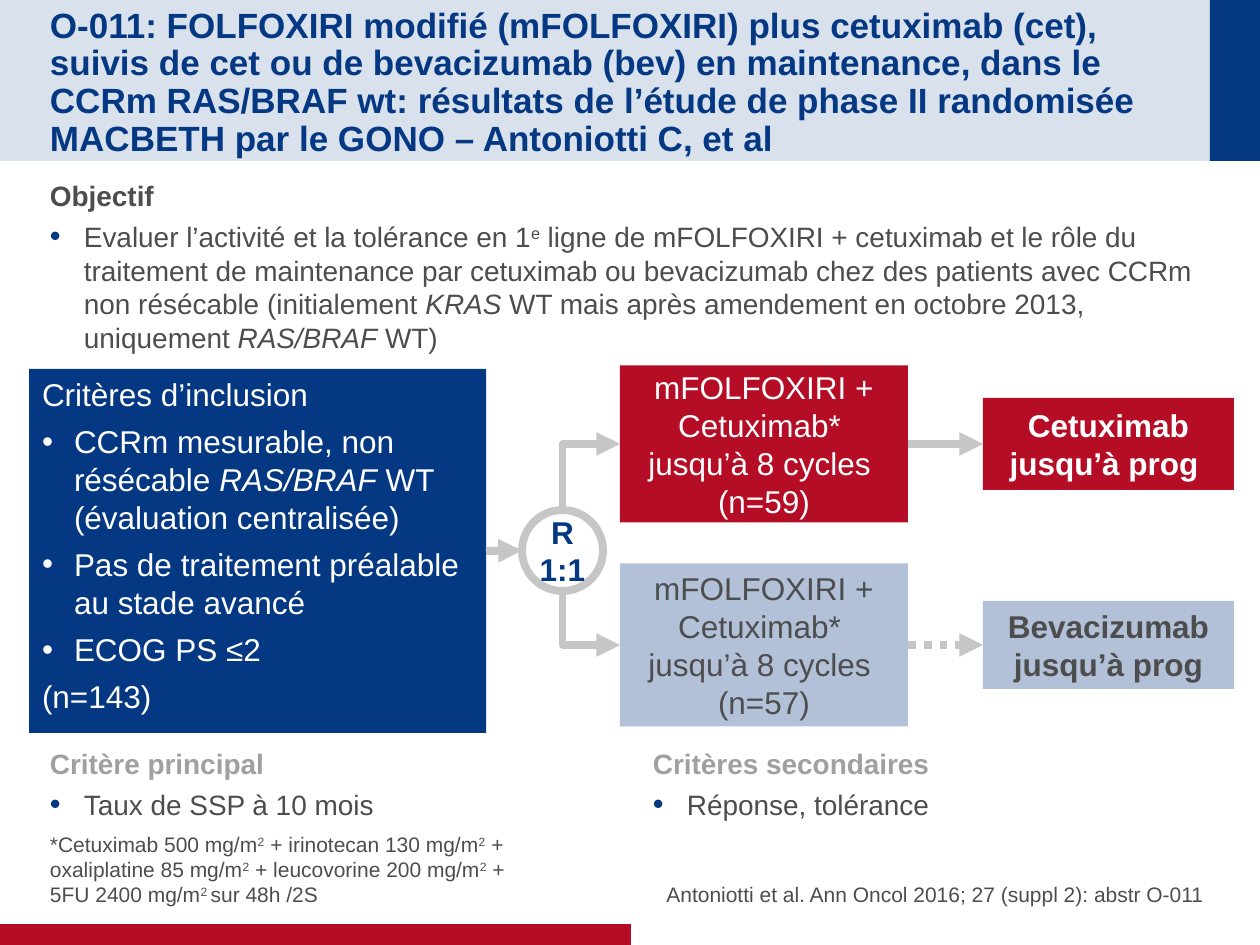
from pptx import Presentation
from pptx.dml.color import RGBColor
from pptx.enum.dml import MSO_LINE
from pptx.enum.shapes import MSO_CONNECTOR, MSO_SHAPE
from pptx.enum.text import MSO_ANCHOR as ANCHOR, PP_ALIGN as ALIGN
from pptx.oxml.ns import qn
from pptx.util import Emu, Pt
from lxml.etree import SubElement

NAVY, RED, PALE, GREY = "043882", "B60D27", "B2C0D8", "4D4D4D"
LIGHT, HEADING, WHITE = "C6C6C6", "A0A0A0", "FFFFFF"

# Content: "|" separates runs, "^" starts a superscript run, "~" an italic one,
# a leading "• " makes a bullet paragraph, "\n" is a line break
TITLE = ["O-011: FOLFOXIRI modifié (mFOLFOXIRI) plus cetuximab (cet), suivis de cet ou de "
         "bevacizumab (bev) en maintenance, dans le CCRm RAS/BRAF wt: résultats de l’étude "
         "de phase II randomisée MACBETH par le GONO – Antoniotti C, et al"]
SECTIONS = [
    ((50, 173, 1174, 654), GREY, "Objectif",
     "• Evaluer l’activité et la tolérance en 1|^e| ligne de mFOLFOXIRI + cetuximab et le rôle du "
     "traitement de maintenance par cetuximab ou bevacizumab chez des patients avec CCRm non "
     "résécable (initialement |~KRAS| WT mais après amendement en octobre 2013, uniquement "
     "|~RAS/BRAF| WT)"),
    ((50, 741, 570, 106), HEADING, "Critère principal", "• Taux de SSP à 10 mois"),
    ((653, 741, 570, 106), HEADING, "Critères secondaires", "• Réponse, tolérance"),
]
NOTES = [
    (50, ALIGN.LEFT, "*Cetuximab 500 mg/m|^2| + irinotecan 130 mg/m|^2| + \noxaliplatine 85 mg/m|^2"
     "| + leucovorine 200 mg/m|^2| + \n5FU 2400 mg/m|^2 |sur 48h /2S"),
    (640, ALIGN.RIGHT, "Antoniotti et al. Ann Oncol 2016; 27 (suppl 2): abstr O-011 "),
]
INCLUSION = ["Critères d’inclusion",
             "• CCRm mesurable, non résécable |~RAS/BRAF| WT (évaluation centralisée)",
             "• Pas de traitement préalable au stade avancé",
             "• ECOG PS ≤2",
             "(n=143)"]
REGIMEN = ["mFOLFOXIRI + Cetuximab* ", "jusqu’à 8 cycles "]
# centre y, fill, text colour, patients, induction height, maintenance, its height, dash
ARMS = [
    (444, RED, WHITE, "(n=59)", 157, "Cetuximab jusqu’à prog ", 92, None),
    (645, PALE, GREY, "(n=57)", 163, "Bevacizumab jusqu’à prog", 88, MSO_LINE.ROUND_DOT),
]
INDUCTION_X, INDUCTION_W = 620, 288
MAINTENANCE_X, MAINTENANCE_W = 983, 251
CIRCLE_X, CIRCLE_Y, CIRCLE_SIZE = 522, 510, 81


def px(value):
    return Emu(round(value * 914400 / 126))


def rgb(color):
    return RGBColor.from_string(color)


def add_bullet(paragraph, indent, color, percent):
    properties = paragraph._p.get_or_add_pPr()
    properties.set("marL", str(px(indent)))
    properties.set("indent", str(-px(indent)))
    clr = SubElement(properties, qn("a:buClr"))
    SubElement(clr, qn("a:srgbClr"), val=color)
    SubElement(properties, qn("a:buSzPct"), val=str(percent * 1000))
    SubElement(properties, qn("a:buFont"), typeface="Arial")
    SubElement(properties, qn("a:buChar"), char="•")


def write(shape, paragraphs, size=18, color=GREY, bold=False, align=ALIGN.LEFT,
          anchor=ANCHOR.TOP, insets=(0, 6, 0, 6), wrap=True, after=0, spacing=None,
          heading=None, bullet=(34, NAVY, 110)):
    frame = shape.text_frame
    frame.word_wrap = wrap
    frame.vertical_anchor = anchor
    (frame.margin_left, frame.margin_top,
     frame.margin_right, frame.margin_bottom) = map(px, insets)
    for index, text in enumerate(paragraphs):
        paragraph = frame.paragraphs[0] if index == 0 else frame.add_paragraph()
        paragraph.alignment = align
        paragraph.space_after = Pt(after)
        if spacing:
            paragraph.line_spacing = spacing
        if text.startswith("• "):
            add_bullet(paragraph, *bullet)
            text = text[2:]
        is_heading = heading is not None and index == 0
        for part in text.split("|"):
            for line_number, line in enumerate(part.lstrip("^~").split("\n")):
                if line_number:
                    paragraph.add_line_break()
                run = paragraph.add_run()
                run.text = line
                font = run.font
                font.name, font.size = "Arial", Pt(size)
                font.bold = bold or is_heading
                font.italic = part.startswith("~")
                font.color.rgb = rgb(heading if is_heading else color)
                if part.startswith("^"):
                    font._element.set("baseline", "30000")


def add_shape(box, fill=None, kind=MSO_SHAPE.RECTANGLE):
    shape = slide.shapes.add_shape(kind, *map(px, box))
    shape.shadow.inherit = False
    shape.line.fill.background()
    if fill:
        shape.fill.solid()
        shape.fill.fore_color.rgb = rgb(fill)
    else:
        shape.fill.background()
    return shape


def add_text(box, paragraphs, **style):
    write(slide.shapes.add_textbox(*map(px, box)), paragraphs, **style)


def add_arrow(start, end, dash=None):
    arrow = slide.shapes.add_connector(MSO_CONNECTOR.STRAIGHT, *map(px, start + end))
    arrow.line.color.rgb = rgb(LIGHT)
    arrow.line.width = Pt(4.5)
    if dash:
        arrow.line.dash_style = dash
    SubElement(arrow.line._get_or_add_ln(), qn("a:tailEnd"), type="triangle")
    SubElement(arrow._element.spPr, qn("a:effectLst"))
    return arrow


def add_elbow(start, end):
    """Leaves start vertically, then turns right into end."""
    arrow = add_arrow(start, end)
    (x1, y1), (x2, y2) = start, end
    length, depth = abs(y2 - y1), x2 - x1
    arrow.left, arrow.top = px((x1 + x2 - length) / 2), px((y1 + y2 - depth) / 2)
    arrow.width, arrow.height = px(length), px(depth)
    properties = arrow._element.spPr
    properties.find(qn("a:prstGeom")).set("prst", "bentConnector2")
    upward = y2 < y1
    transform = properties.find(qn("a:xfrm"))
    transform.set("rot", str((90 if upward else 270) * 60000))
    transform.set("flipH", "1")
    transform.set("flipV", "1" if upward else "0")


presentation = Presentation()
presentation.slide_width, presentation.slide_height = px(1260), px(945)
slide = presentation.slides.add_slide(presentation.slide_layouts[6])

# Header and footer bands
header = add_shape((0, 0, 1260, 161), NAVY)
header_color = header.fill._xPr.find(qn("a:solidFill"))[0]
SubElement(header_color, qn("a:alpha"), val="15000")
add_shape((1210, 0, 50, 161), NAVY)
add_shape((0, 924, 631, 21), RED)

# Title, sections and notes
add_text((50, 25, 1135, 111), TITLE, size=20, color=NAVY, bold=True,
         anchor=ANCHOR.MIDDLE, insets=(0, 6, 0, 0), spacing=0.9)
for box, heading, *paragraphs in SECTIONS:
    add_text(box, paragraphs, size=16, heading=heading, after=4)
for left, align, note in NOTES:
    add_text((left, 840, 570, 67), [note], size=12, align=align,
             anchor=ANCHOR.BOTTOM, insets=(0, 0, 0, 0), after=4)

# Inclusion criteria
inclusion = add_shape((29, 369, 457, 364), NAVY, MSO_SHAPE.ROUNDED_RECTANGLE)
inclusion.adjustments[0] = 0
write(inclusion, INCLUSION, color=WHITE, insets=(13, 6, 13, 6), after=5.4,
      bullet=(32, WHITE, 100))

# Randomisation
middle_x, middle_y = CIRCLE_X + CIRCLE_SIZE / 2, CIRCLE_Y + CIRCLE_SIZE / 2
add_arrow((486, middle_y), (CIRCLE_X, middle_y)).begin_connect(inclusion, 3)
circle = add_shape((CIRCLE_X, CIRCLE_Y, CIRCLE_SIZE, CIRCLE_SIZE), kind=MSO_SHAPE.OVAL)
circle.line.color.rgb = rgb(LIGHT)
circle.line.width = Pt(4.5)
write(circle, ["R", "1:1"], color=NAVY, bold=True, align=ALIGN.CENTER,
      anchor=ANCHOR.MIDDLE, insets=(13, 6, 13, 6), wrap=False)

# Treatment arms
for y, fill, color, patients, height, maintenance, maintenance_height, dash in ARMS:
    style = dict(color=color, align=ALIGN.CENTER, anchor=ANCHOR.MIDDLE, insets=(13, 0, 13, 0))
    first = add_shape((INDUCTION_X, y - height / 2, INDUCTION_W, height), fill)
    write(first, REGIMEN + [patients], **style)
    second = add_shape((MAINTENANCE_X, y - maintenance_height / 2,
                        MAINTENANCE_W, maintenance_height), fill)
    write(second, [maintenance], bold=True, **style)
    circle_edge = CIRCLE_Y if y < middle_y else CIRCLE_Y + CIRCLE_SIZE
    add_elbow((middle_x, circle_edge), (INDUCTION_X, y))
    arrow = add_arrow((INDUCTION_X + INDUCTION_W, y), (MAINTENANCE_X, y), dash)
    arrow.begin_connect(first, 3)
    arrow.end_connect(second, 1)

presentation.save("out.pptx")
